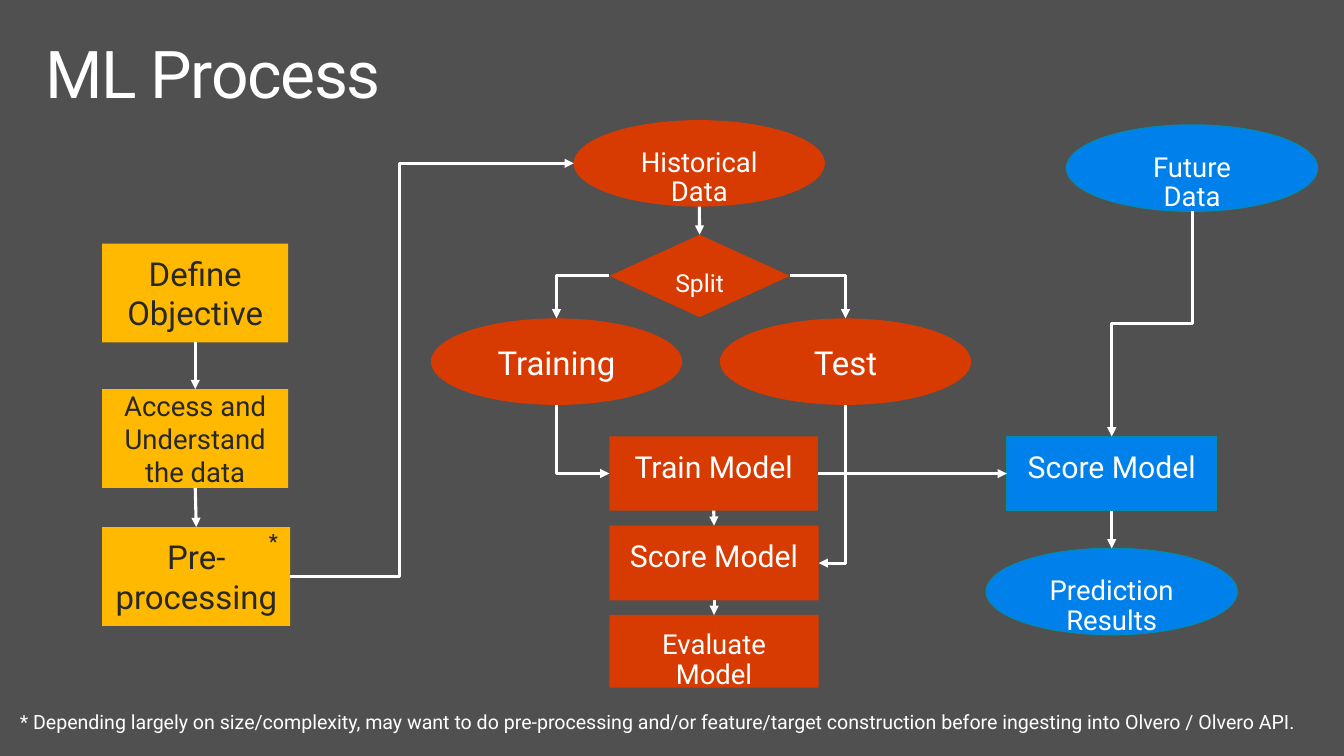
from lxml import etree
from pptx import Presentation
from pptx import util as u
from pptx.dml.color import RGBColor
from pptx.enum import shapes, text
from pptx.oxml.ns import qn

FONT = "Roboto"
GRAY, WHITE, DARK = "505050", "FFFFFF", "282828"
YELLOW, ORANGE, BLUE, TEAL = "FFB900", "D83B01", "0080EA", "008BB3"
RECT = shapes.MSO_SHAPE.RECTANGLE
OVAL = shapes.MSO_SHAPE.OVAL
DIAMOND = shapes.MSO_SHAPE.DIAMOND
OVAL_SIZE = (183, 63)

TITLE = "ML Process"
FOOTNOTE = (
    "* Depending largely on size/complexity, may want to do pre-processing and/or "
    "feature/target construction before ingesting into Olvero / Olvero API."
)

STEPS = {
    "define": ("Define Objective", RECT, YELLOW, 24, (74.5, 177.5), (135.5, 72)),
    "access": ("Access and Understand the data", RECT, YELLOW, 20, (74.5, 283.5), (135.5, 72)),
    "prepare": ("Pre-processing", RECT, YELLOW, 24, (74.5, 384), (137, 72)),
    "history": ("Historical Data", OVAL, ORANGE, 20, (418, 87.5), OVAL_SIZE),
    "training": ("Training", OVAL, ORANGE, 24, (314, 232), OVAL_SIZE),
    "test": ("Test", OVAL, ORANGE, 24, (524.5, 232), OVAL_SIZE),
    "future": ("Future Data", OVAL, BLUE, 20, (777, 91), OVAL_SIZE),
    "split": ("Split", DIAMOND, ORANGE, 18, (444, 171), (131.5, 60)),
    "train": ("Train Model", RECT, ORANGE, 22, (444, 318), (152, 54)),
    "score": ("Score Model", RECT, ORANGE, 22, (444, 383), (152.5, 54.5)),
    "evaluate": ("Evaluate Model", RECT, ORANGE, 20, (444, 448), (152.5, 53)),
    "predict": ("Score Model", RECT, BLUE, 22, (733.5, 318), (153, 54)),
    "results": ("Prediction Results", OVAL, BLUE, 20, (718.5, 399.5), OVAL_SIZE),
}

ARROWS = [
    ("history", "bottom", "split", "top"),
    ("split", "left", "training", "top"),
    ("split", "right", "test", "top"),
    ("training", "bottom", "train", "left"),
    ("test", "bottom", "score", "right"),
    ("train", "right", "predict", "left"),
    ("future", "bottom", "predict", "top"),
    ("predict", "bottom", "results", "top"),
    ("train", "bottom", "score", "top"),
    ("score", "bottom", "evaluate", "top"),
    ("prepare", "right", "history", "left"),
    ("define", "bottom", "access", "top"),
    ("access", "bottom", "prepare", "top"),
]
BENDS = {("prepare", "history"): 0.386}
SIDES = {"top": (0.5, 0), "bottom": (0.5, 1), "left": (0, 0.5), "right": (1, 0.5)}


def color(value):
    return RGBColor.from_string(value)


def write(shape, words, size, fill=WHITE, align=text.PP_ALIGN.LEFT,
          anchor=text.MSO_ANCHOR.TOP, insets=(14.4, 11.5), spacing=0.9,
          bold=False, wrap=True, tracking=None):
    frame = shape.text_frame
    frame.word_wrap = wrap
    frame.auto_size = text.MSO_AUTO_SIZE.NONE
    frame.vertical_anchor = anchor
    frame.margin_left = frame.margin_right = u.Pt(insets[0])
    frame.margin_top = frame.margin_bottom = u.Pt(insets[1])
    paragraph = frame.paragraphs[0]
    paragraph.alignment = align
    paragraph.line_spacing = spacing
    run = paragraph.add_run()
    run.text = words
    run.font.name = FONT
    run.font.size = u.Pt(size)
    run.font.bold = bold
    run.font.color.rgb = color(fill)
    if tracking is not None:
        run.font._element.set("spc", str(tracking * 100))


def add_step(slide, words, kind, fill, size, position, extent):
    shape = slide.shapes.add_shape(kind, *map(u.Pt, position + extent))
    shape.shadow.inherit = False
    shape.fill.solid()
    shape.fill.fore_color.rgb = color(fill)
    if fill == BLUE:
        shape.line.color.rgb = color(TEAL)
        shape.line.width = u.Pt(0.85)
    else:
        shape.line.fill.background()
    layout = {}
    if fill == YELLOW:
        layout = dict(fill=DARK, anchor=text.MSO_ANCHOR.MIDDLE,
                      insets=(7.2, 3.6), spacing=1.0)
    write(shape, words, size, align=text.PP_ALIGN.CENTER, **layout)


def site(step, side):
    (left, top), (width, height) = STEPS[step][4:]
    across, down = SIDES[side]
    return left + across * width, top + down * height


def add_arrow(slide, start, start_side, end, end_side):
    x1, y1 = site(start, start_side)
    x2, y2 = site(end, end_side)
    dx, dy = x2 - x1, y2 - y1
    downward = start_side == "bottom"
    straight = min(abs(dx), abs(dy)) < 1.5
    kind = shapes.MSO_CONNECTOR.STRAIGHT if straight else shapes.MSO_CONNECTOR.ELBOW
    turned = downward and not straight
    if turned:
        middle_x, middle_y = (x1 + x2) / 2, (y1 + y2) / 2
        x1, x2 = middle_x - dy / 2, middle_x + dy / 2
        y1, y2 = middle_y + dx / 2, middle_y - dx / 2
    connector = slide.shapes.add_connector(kind, *map(u.Pt, (x1, y1, x2, y2)))
    connector.line.color.rgb = color(WHITE)
    connector.line.width = u.Pt(2.25)
    properties = connector._element.spPr
    if turned:
        properties.find(qn("a:xfrm")).set("rot", "5400000")
    geometry = properties.find(qn("a:prstGeom"))
    if not straight and downward != (end_side == "top"):
        geometry.set("prst", "bentConnector2")
    if (start, end) in BENDS:
        guide = etree.SubElement(geometry.find(qn("a:avLst")), qn("a:gd"))
        guide.set("name", "adj1")
        guide.set("fmla", f"val {round(BENDS[start, end] * 100000)}")
    etree.SubElement(properties.find(qn("a:ln")), qn("a:tailEnd")).set("type", "triangle")
    etree.SubElement(properties, qn("a:effectLst"))


def main():
    presentation = Presentation()
    presentation.slide_width = u.Pt(979.2)
    presentation.slide_height = u.Pt(550.8)
    slide = presentation.slides.add_slide(presentation.slide_layouts[5])
    slide.background.fill.solid()
    slide.background.fill.fore_color.rgb = color(GRAY)

    title = slide.shapes.title
    title.left, title.top, title.width, title.height = map(u.Pt, (21.6, 23, 936, 72))
    write(title, TITLE, 48, insets=(11.5, 7.2), tracking=-1)

    for step in STEPS.values():
        add_step(slide, *step)
    for arrow in ARROWS:
        add_arrow(slide, *arrow)

    star = slide.shapes.add_textbox(*map(u.Pt, (181.5, 376, 36, 39.5)))
    write(star, "*", 14.3, fill=DARK, bold=True, wrap=False)
    footnote = slide.shapes.add_textbox(*map(u.Pt, (0, 507.5, 979, 39.5)))
    write(footnote, FOOTNOTE, 14.3, wrap=False)

    presentation.save("out.pptx")


if __name__ == "__main__":
    main()
